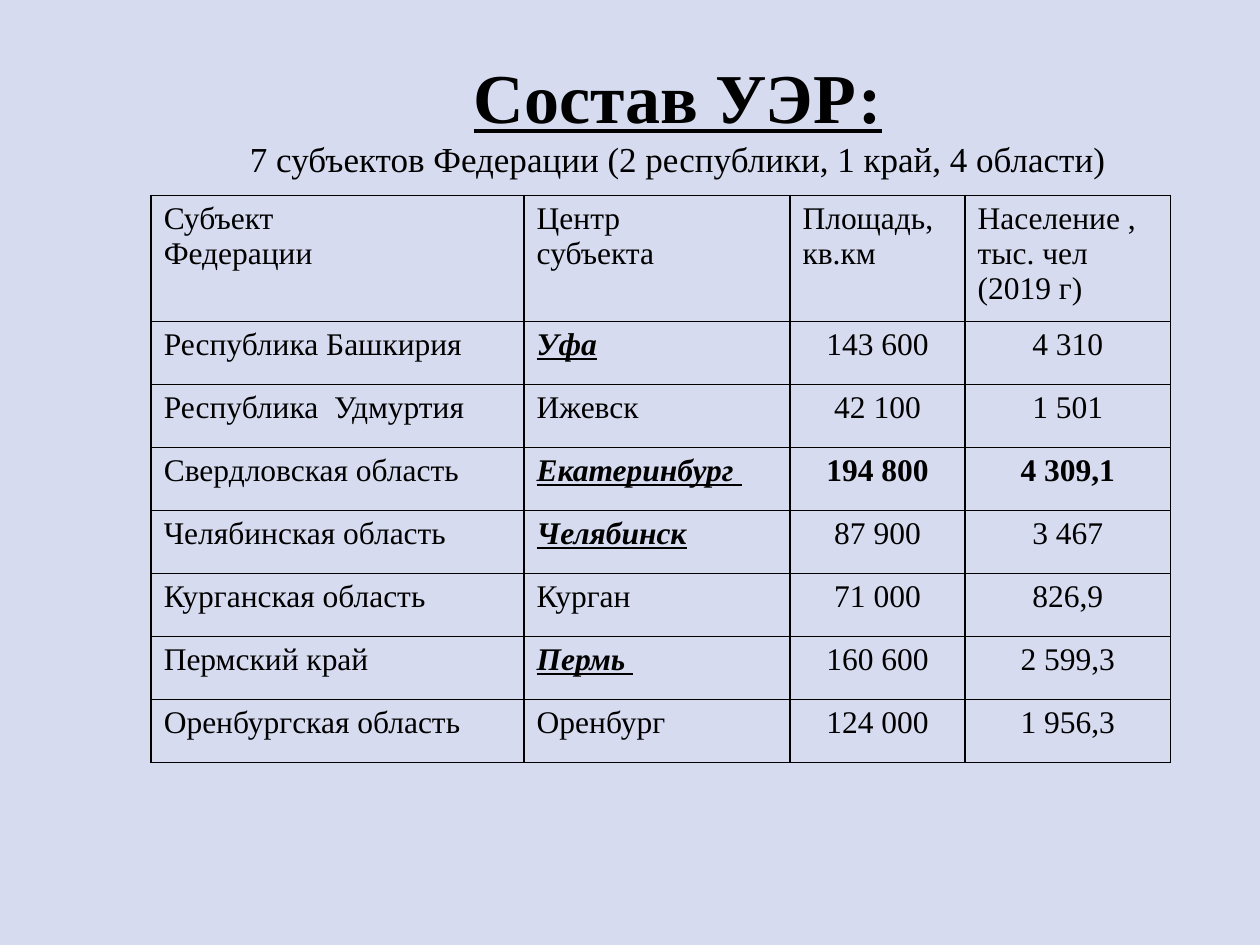
from lxml import etree
from pptx import Presentation
from pptx.dml.color import RGBColor
from pptx.enum.text import MSO_ANCHOR, PP_ALIGN
from pptx.oxml.ns import qn
from pptx.util import Inches, Pt

CENTER, LEFT = PP_ALIGN.CENTER, PP_ALIGN.LEFT
MIDDLE = MSO_ANCHOR.MIDDLE
BACKGROUND = RGBColor(0xD6, 0xDB, 0xEF)
BLACK = RGBColor(0, 0, 0)
FONT = "Times New Roman"

TITLE = "Состав УЭР:"
SUBTITLE = "7 субъектов Федерации (2 республики, 1 край, 4 области)"
HEADER = ("Субъект\nФедерации", "Центр\nсубъекта", "Площадь,\nкв.км",
          "Население ,\nтыс. чел (2019 г)")
REGIONS = [
    ("Республика Башкирия", "Уфа", "143 600", "4 310"),
    ("Республика  Удмуртия", "Ижевск", "42 100", "1 501"),
    ("Свердловская область", "Екатеринбург ", "194 800", "4 309,1"),
    ("Челябинская область", "Челябинск", "87 900", "3 467"),
    ("Курганская область", "Курган", "71 000", "826,9"),
    ("Пермский край", "Пермь ", "160 600", "2 599,3"),
    ("Оренбургская область", "Оренбург", "124 000", "1 956,3"),
]
MAJOR_CITIES = {"Уфа", "Екатеринбург ", "Челябинск", "Пермь "}
BOLD_VALUES = {"194 800", "4 309,1"}

COLUMN_WIDTHS = (2.96, 2.11, 1.39, 1.63)
HEADER_HEIGHT, ROW_HEIGHT = 1, 0.5
TABLE_LEFT, TABLE_TOP = 1.2, 1.55
FIRST_NUMBER_COLUMN = 2


def format_font(font, size, **values):
    font.color.rgb = BLACK
    for name, value in {"name": FONT, "size": Pt(size), **values}.items():
        setattr(font, name, value)


def add_borders(cell):
    properties = cell._tc.get_or_add_tcPr()
    for position, side in enumerate(("a:lnL", "a:lnR", "a:lnT", "a:lnB")):
        line = etree.Element(qn(side), w=str(Pt(1)))
        fill = etree.SubElement(line, qn("a:solidFill"))
        etree.SubElement(fill, qn("a:srgbClr"), val=str(BLACK))
        properties.insert(position, line)


def add_heading(slide):
    box = slide.shapes.add_textbox(Inches(0.88), Inches(0.3), Inches(9), Inches(1.25))
    frame = box.text_frame
    frame.word_wrap = True
    frame.vertical_anchor = MIDDLE
    paragraph = frame.paragraphs[0]
    paragraph.alignment = CENTER
    title = paragraph.add_run()
    title.text = TITLE
    format_font(title.font, 40, bold=True, underline=True)
    paragraph.add_line_break()
    subtitle = paragraph.add_run()
    subtitle.text = SUBTITLE
    format_font(subtitle.font, 20, bold=False, underline=False)


def fill_cell(cell, text, alignment):
    cell.text = text
    cell.fill.background()
    add_borders(cell)
    major = text in MAJOR_CITIES
    for paragraph in cell.text_frame.paragraphs:
        paragraph.alignment = alignment
        for run in paragraph.runs:
            format_font(run.font, 18, bold=major or text in BOLD_VALUES,
                        italic=major, underline=major)


def add_region_table(slide):
    rows = [HEADER, *REGIONS]
    heights = [HEADER_HEIGHT] + [ROW_HEIGHT] * len(REGIONS)
    table = slide.shapes.add_table(
        len(rows), len(HEADER), Inches(TABLE_LEFT), Inches(TABLE_TOP),
        Inches(sum(COLUMN_WIDTHS)), Inches(sum(heights))).table
    table.first_row = table.horz_banding = False
    for column, width in zip(table.columns, COLUMN_WIDTHS):
        column.width = Inches(width)
    for row, height in zip(table.rows, heights):
        row.height = Inches(height)
    for row_index, values in enumerate(rows):
        for column_index, text in enumerate(values):
            is_number = row_index > 0 and column_index >= FIRST_NUMBER_COLUMN
            fill_cell(table.cell(row_index, column_index), text,
                      CENTER if is_number else LEFT)


def main():
    presentation = Presentation()
    presentation.slide_width, presentation.slide_height = Inches(10), Inches(7.5)
    slide = presentation.slides.add_slide(presentation.slide_layouts[6])
    slide.background.fill.solid()
    slide.background.fill.fore_color.rgb = BACKGROUND
    add_heading(slide)
    add_region_table(slide)
    presentation.save("out.pptx")


if __name__ == "__main__":
    main()
